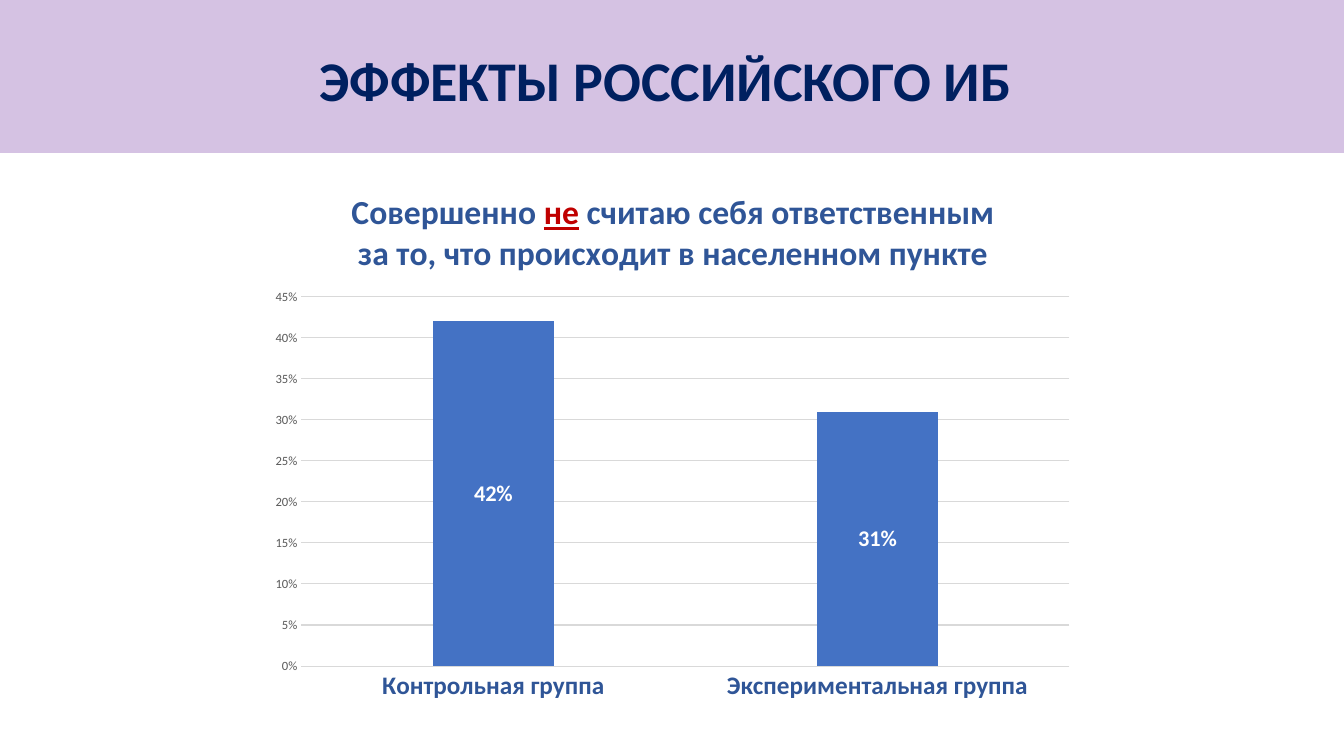
import pptx
import pptx.chart.data
import pptx.dml.color
import pptx.enum.chart
import pptx.enum.shapes
import pptx.enum.text
import pptx.oxml
import pptx.oxml.ns
import pptx.util

PX = 914400 / 100.8
FONT = "Calibri"
COLORS = {
    "band": "7030A0",
    "heading": "002060",
    "caption": "2F5597",
    "accent": "C00000",
    "bar": "4472C4",
    "grid": "D9D9D9",
    "scale": "595959",
    "white": "FFFFFF",
}
GROUPS = {"Контрольная группа": 0.42, "Экспериментальная группа": 0.31}
CAPTION = [
    ("Совершенно ", False),
    ("не", True),
    (" считаю себя ответственным за то, что происходит в населенном пункте", False),
]


def px(*lengths):
    return [pptx.util.Emu(round(length * PX)) for length in lengths]


def rgb(name):
    return pptx.dml.color.RGBColor.from_string(COLORS[name])


def style_font(font, size, color, bold=True):
    font.name = FONT
    font.size = pptx.util.Pt(size)
    font.bold = bold
    font.color.rgb = rgb(color)


def style_line(line, color):
    line.color.rgb = rgb(color)
    line.width = pptx.util.Pt(0.75)


def add_band(slide, bounds, opacity):
    band = slide.shapes.add_shape(pptx.enum.shapes.MSO_SHAPE.RECTANGLE, *px(*bounds))
    band.shadow.inherit = False
    band.line.fill.background()
    band.fill.solid()
    band.fill.fore_color.rgb = rgb("band")
    color = band.fill._xPr.find(".//" + pptx.oxml.ns.qn("a:srgbClr"))
    color.append(pptx.oxml.parse_xml(
        f'<a:alpha {pptx.oxml.ns.nsdecls("a")} val="{opacity * 1000}"/>'))


def add_heading(slide, bounds, text):
    box = slide.shapes.add_textbox(*px(*bounds))
    frame = box.text_frame
    frame.word_wrap = True
    frame.vertical_anchor = pptx.enum.text.MSO_ANCHOR.MIDDLE
    frame.text = text
    para = frame.paragraphs[0]
    para.alignment = pptx.enum.text.PP_ALIGN.CENTER
    para.line_spacing = 0.9
    style_font(para.runs[0].font, 40, "heading")


def set_caption(chart, parts):
    chart.has_title = True
    chart.chart_title.include_in_layout = False
    para = chart.chart_title.text_frame.paragraphs[0]
    for text, stressed in parts:
        span = para.add_run()
        span.text = text
        style_font(span.font, 24, "accent" if stressed else "caption")
        span.font.underline = stressed


def set_plot_area(chart, left, top, width, height):
    plot_area = chart._chartSpace.chart.plotArea
    for layout in plot_area.findall(pptx.oxml.ns.qn("c:layout")):
        plot_area.remove(layout)
    plot_area.insert(0, pptx.oxml.parse_xml(
        f'<c:layout {pptx.oxml.ns.nsdecls("c")}><c:manualLayout>'
        '<c:layoutTarget val="inner"/><c:xMode val="edge"/><c:yMode val="edge"/>'
        f'<c:x val="{left}"/><c:y val="{top}"/><c:w val="{width}"/><c:h val="{height}"/>'
        '</c:manualLayout></c:layout>'))


def style_axes(chart):
    no_tick = pptx.enum.chart.XL_TICK_MARK.NONE
    for axis in (chart.category_axis, chart.value_axis):
        axis.major_tick_mark = axis.minor_tick_mark = no_tick
    groups, scale = chart.category_axis, chart.value_axis
    style_font(groups.tick_labels.font, 18, "caption")
    style_line(groups.format.line, "grid")
    style_font(scale.tick_labels.font, 9, "scale", bold=False)
    scale.tick_labels.number_format = "0%"
    scale.tick_labels.number_format_is_linked = False
    scale.format.line.fill.background()
    style_line(scale.major_gridlines.format.line, "grid")
    scale.minimum_scale, scale.maximum_scale, scale.major_unit = 0, 0.45, 0.05


def style_bars(chart):
    plot = chart.plots[0]
    plot.gap_width, plot.overlap = 219, -27
    plot.vary_by_categories = False
    bars = plot.series[0]
    bars.format.fill.solid()
    bars.format.fill.fore_color.rgb = rgb("bar")
    labels = bars.data_labels
    labels.show_value = True
    labels.number_format = "0%"
    labels.number_format_is_linked = False
    labels.position = pptx.enum.chart.XL_LABEL_POSITION.CENTER
    style_font(labels.font, 16, "white")


def add_group_chart(slide, bounds, groups):
    chart_data = pptx.chart.data.CategoryChartData(number_format="0%")
    chart_data.categories = list(groups)
    chart_data.add_series("Series 1", list(groups.values()))
    chart = slide.shapes.add_chart(
        pptx.enum.chart.XL_CHART_TYPE.COLUMN_CLUSTERED, *px(*bounds), chart_data).chart
    chart.has_legend = False
    chart.font.name = FONT
    chart.font.size = pptx.util.Pt(10)
    set_caption(chart, CAPTION)
    style_axes(chart)
    style_bars(chart)
    set_plot_area(chart, 0.05, 0.23, 0.93, 0.68)


def main():
    deck = pptx.Presentation()
    deck.slide_width, deck.slide_height = px(1344, 756)
    page = deck.slides.add_slide(deck.slide_layouts[6])

    # Heading on its tinted band
    add_band(page, (0, 0, 1344, 153), 29)
    add_heading(page, (98, -53, 1135, 272), "ЭФФЕКТЫ РОССИЙСКОГО ИБ")

    # Comparison of the two groups
    add_group_chart(page, (260, 172, 826, 543), GROUPS)

    deck.save("out.pptx")


if __name__ == "__main__":
    main()
